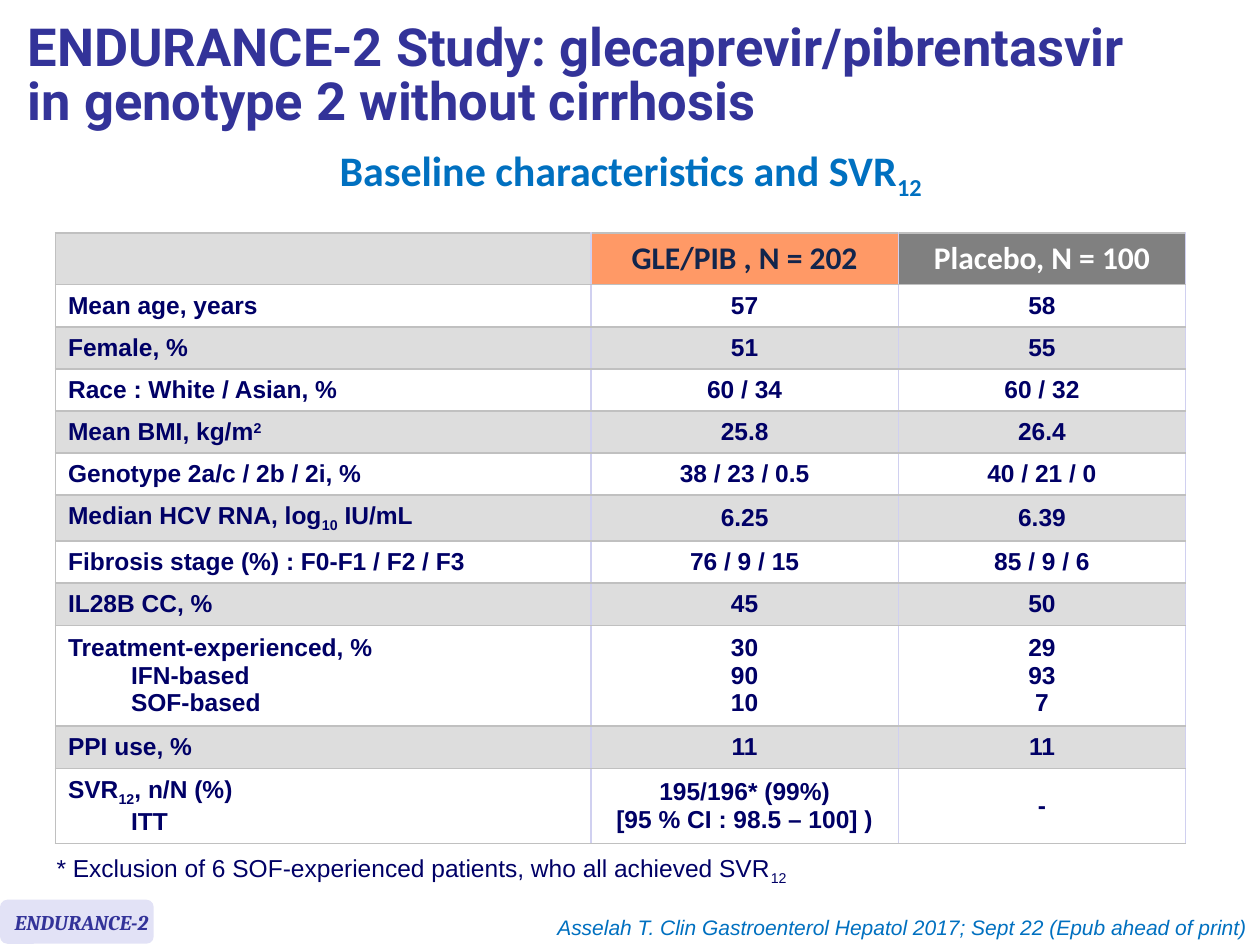
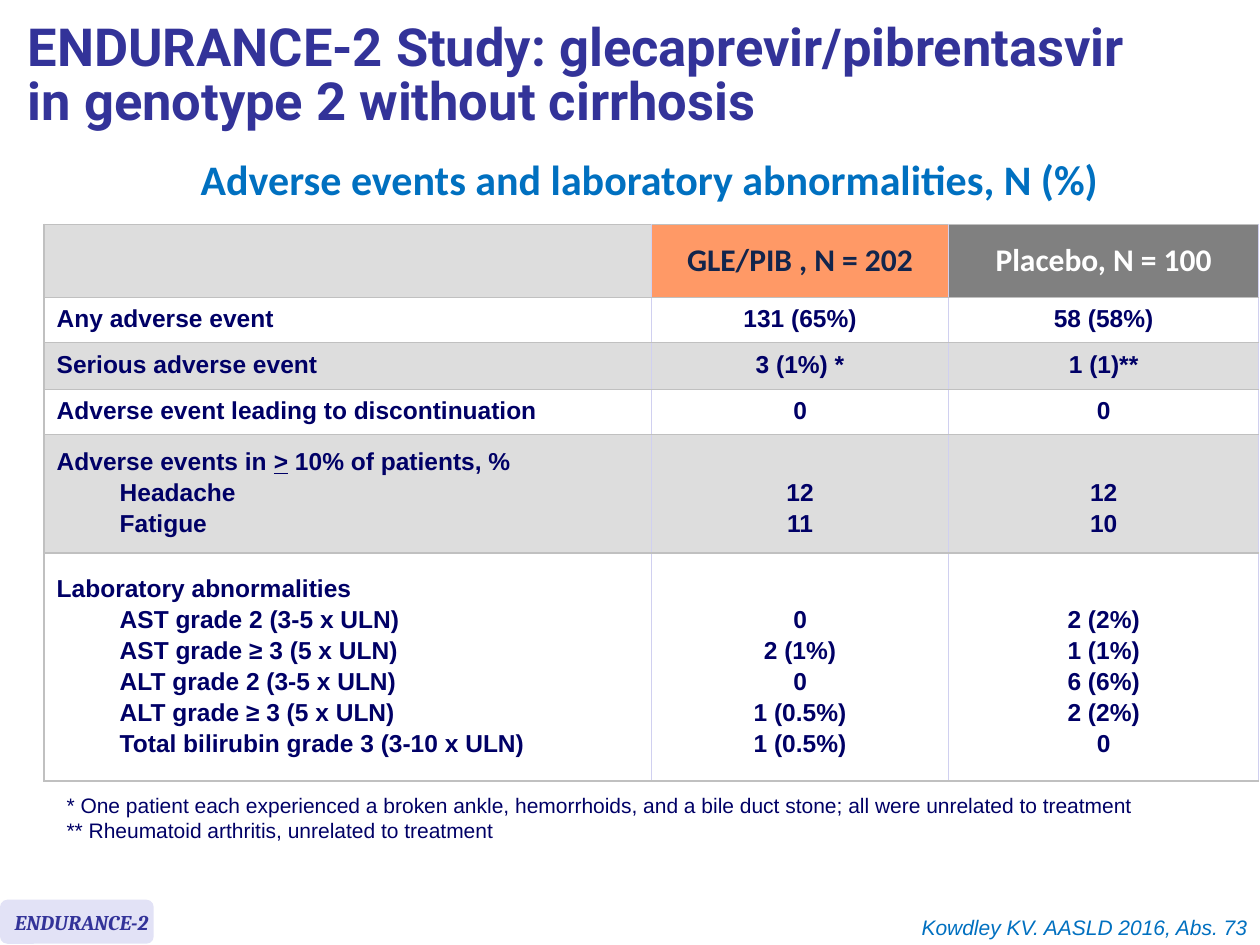
from dataclasses import dataclass

from lxml.etree import SubElement
from pptx import Presentation
from pptx.dml.color import RGBColor
from pptx.enum.shapes import MSO_SHAPE
from pptx.enum.text import MSO_ANCHOR, MSO_AUTO_SIZE, PP_ALIGN
from pptx.oxml.ns import qn
from pptx.util import Inches, Pt


@dataclass(frozen=True)
class TextStyle:
    font: str
    size: float
    color: str
    bold: bool = False
    italic: bool = False


class Theme:
    title = TextStyle("Roboto", 30, "333399", bold=True)
    subtitle = TextStyle("Calibri", 24, "0070C0", bold=True)
    treated_head = TextStyle("Calibri", 18, "12254C", bold=True)
    placebo_head = TextStyle("Calibri", 18, "FFFFFF", bold=True)
    cell = TextStyle("Arial", 14, "000066", bold=True)
    large_note = TextStyle("Arial", 14, "000066")
    small_note = TextStyle("Arial", 12, "000066")
    badge = TextStyle("Cambria", 12, "333399", bold=True, italic=True)
    source = TextStyle("Arial", 12, "0070C0", italic=True)
    treated_fill, placebo_fill, badge_fill = "FF9966", "808080", "E2E2F6"
    band_fills = ("DDDDDD", "FFFFFF")
    rule, column_rule = "C0C0C0", "D0D0F0"


SUB = {"baseline": "-25000"}
SUPER = {"baseline": "30000"}
UNDERLINE = {"u": "sng"}

TITLE = "ENDURANCE-2 Study: glecaprevir/pibrentasvir\vin genotype 2 without cirrhosis"
BADGE = "ENDURANCE-2"
ARMS = ("GLE/PIB , N = 202", "Placebo, N = 100")

# A cell is a list of lines; a line is a string or a tuple of (text, run attributes).
# Lines after the first one of a row label are indented.
SLIDES = [
    {
        "subtitle": (("Baseline characteristics and SVR", {}), ("12", SUB)),
        "subtitle_at": (0.28, 1.34, 9.45, 0.35),
        "table_at": (0.44, 1.85),
        "columns": (4.25, 2.44, 2.28),
        "header_height": 0.41,
        "line_pitch": {},
        "rows": [
            (0.32, ["Mean age, years"], ["57"], ["58"]),
            (0.32, ["Female, %"], ["51"], ["55"]),
            (0.32, ["Race : White / Asian, %"], ["60 / 34"], ["60 / 32"]),
            (0.32, [(("Mean BMI, kg/m", {}), ("2", SUPER))], ["25.8"], ["26.4"]),
            (0.32, ["Genotype 2a/c / 2b / 2i, %"], ["38 / 23 / 0.5"], ["40 / 21 / 0"]),
            (0.35, [(("Median HCV RNA, log", {}), ("10", SUB), (" IU/mL", {}))],
             ["6.25"], ["6.39"]),
            (0.32, ["Fibrosis stage (%) : F0-F1 / F2 / F3"], ["76 / 9 / 15"], ["85 / 9 / 6"]),
            (0.32, ["IL28B CC, %"], ["45"], ["50"]),
            (0.77, ["Treatment-experienced, %", "IFN-based", "SOF-based"],
             ["30", "90", "10"], ["29", "93", "7"]),
            (0.32, ["PPI use, %"], ["11"], ["11"]),
            (0.58, [(("SVR", {}), ("12", SUB), (", n/N (%)", {})), "ITT"],
             ["195/196* (99%)", "[95 % CI : 98.5 – 100] )"], ["-"]),
        ],
        "notes": [(("* Exclusion of 6 SOF-experienced patients, who all achieved SVR", {}),
                   ("12", SUB))],
        "notes_at": (0.35, 6.72, 9.25, 0.34),
        "notes_style": Theme.large_note,
        "source": "Asselah T. Clin Gastroenterol Hepatol 2017; Sept 22 (Epub ahead of print)",
    },
    {
        "subtitle": "Adverse events and laboratory abnormalities, N (%)",
        "subtitle_at": (0.43, 1.36, 9.45, 0.35),
        "table_at": (0.35, 1.78),
        "columns": (4.82, 2.36, 2.46),
        "header_height": 0.58,
        "line_pitch": {"line_spacing": Pt(15), "space_before": Pt(2.8)},
        "rows": [
            (0.36, ["Any adverse event"], ["131 (65%)"], ["58 (58%)"]),
            (0.37, ["Serious adverse event"], ["3 (1%) *"], ["1 (1)**"]),
            (0.36, ["Adverse event leading to discontinuation"], ["0"], ["0"]),
            (0.94, [(("Adverse events in ", {}), (">", UNDERLINE), (" 10% of patients, %", {})),
                    "Headache", "Fatigue"], ["12", "11"], ["12", "10"]),
            (1.81, ["Laboratory abnormalities", "AST grade 2 (3-5 x ULN)",
                    "AST grade ≥ 3 (5 x ULN)", "ALT grade 2 (3-5 x ULN)",
                    "ALT grade ≥ 3 (5 x ULN)", "Total bilirubin grade 3 (3-10 x ULN)"],
             ["0", "2 (1%)", "0", "1 (0.5%)", "1 (0.5%)"],
             ["2 (2%)", "1 (1%)", "6 (6%)", "2 (2%)", "0"]),
        ],
        "notes": ["* One patient each experienced a broken ankle, hemorrhoids, and a bile duct "
                  "stone; all were unrelated to treatment",
                  "** Rheumatoid arthritis, unrelated to treatment"],
        "notes_at": (0.43, 6.24, 9.25, 0.5),
        "notes_style": Theme.small_note,
        "source": "Kowdley KV. AASLD 2016, Abs. 73",
    },
]

TITLE_AT = (0.12, 0.08, 9.88, 1.07)
BADGE_AT = (0, 7.14, 1.22, 0.35)
SOURCE_AT = (2.64, 7.21, 7.36, 0.3)
CELL_MARGIN = 0.05
SUBLINE_INDENT = 0.5
LINE_STEP = 17.8 / 72


def rgb(color):
    return RGBColor.from_string(color)


def inches(lengths):
    return [Inches(length) for length in lengths]


def style_font(font, style):
    font.name, font.size = style.font, Pt(style.size)
    font.bold, font.italic = style.bold, style.italic
    font.color.rgb = rgb(style.color)


def write_lines(frame, lines, style, **paragraph_format):
    for index, line in enumerate(lines):
        paragraph = frame.paragraphs[0] if index == 0 else frame.add_paragraph()
        for name, value in paragraph_format.items():
            if index or name != "space_before":
                setattr(paragraph, name, value)
        for text, attributes in [(line, {})] if isinstance(line, str) else line:
            run = paragraph.add_run()
            run.text = text
            style_font(run.font, style)
            for name, value in attributes.items():
                run._r.get_or_add_rPr().set(name, value)


def add_text(slide, at, lines, style, **paragraph_format):
    frame = slide.shapes.add_textbox(*inches(at)).text_frame
    frame.word_wrap = True
    write_lines(frame, lines, style, **paragraph_format)


def add_title(slide):
    title = slide.shapes.title
    title.left, title.top, title.width, title.height = inches(TITLE_AT)
    frame = title.text_frame
    frame.auto_size, frame.vertical_anchor = MSO_AUTO_SIZE.NONE, MSO_ANCHOR.MIDDLE
    frame.text = TITLE
    paragraph = frame.paragraphs[0]
    paragraph.alignment, paragraph.line_spacing = PP_ALIGN.LEFT, 0.85
    for run in paragraph.runs:
        style_font(run.font, Theme.title)


def add_badge(slide):
    badge = slide.shapes.add_shape(MSO_SHAPE.ROUNDED_RECTANGLE, *inches(BADGE_AT))
    badge.shadow.inherit = False
    badge.fill.solid()
    badge.fill.fore_color.rgb = rgb(Theme.badge_fill)
    badge.line.fill.background()
    frame = badge.text_frame
    frame.vertical_anchor = MSO_ANCHOR.TOP
    frame.margin_top, frame.margin_right = Inches(0.06), 0
    write_lines(frame, [BADGE], Theme.badge, alignment=PP_ALIGN.LEFT)


def format_cell(cell, fill, left_rule):
    """Draw the borders first: the schema wants them ahead of the fill."""
    properties = cell._tc.get_or_add_tcPr()
    borders = {"a:lnL": left_rule, "a:lnR": Theme.column_rule,
               "a:lnT": Theme.rule, "a:lnB": Theme.rule}
    for side, color in borders.items():
        border = SubElement(properties, qn(side), w=str(Pt(1)))
        SubElement(SubElement(border, qn("a:solidFill")), qn("a:srgbClr"), val=color)
    cell.fill.solid()
    cell.fill.fore_color.rgb = rgb(fill)
    cell.vertical_anchor = MSO_ANCHOR.MIDDLE
    cell.margin_top = cell.margin_bottom = Inches(CELL_MARGIN)


def add_results(slide, content):
    columns, rows = content["columns"], content["rows"]
    heights = [content["header_height"], *(row[0] for row in rows)]
    size = (sum(columns), sum(heights))
    table = slide.shapes.add_table(len(heights), len(columns),
                                   *inches(content["table_at"] + size)).table
    table.first_row = table.horz_banding = False
    for column, width in zip(table.columns, columns):
        column.width = Inches(width)
    for row, height in zip(table.rows, heights):
        row.height = Inches(height)

    heads = [(Theme.band_fills[0], None, None),
             (Theme.treated_fill, ARMS[0], Theme.treated_head),
             (Theme.placebo_fill, ARMS[1], Theme.placebo_head)]
    for col, (fill, arm, style) in enumerate(heads):
        cell = table.cell(0, col)
        format_cell(cell, fill, Theme.column_rule if col else Theme.rule)
        if arm:
            write_lines(cell.text_frame, [arm], style, alignment=PP_ALIGN.CENTER)

    for row, (_, label, *values) in enumerate(rows, start=1):
        for col, lines in enumerate([label, *values]):
            cell = table.cell(row, col)
            format_cell(cell, Theme.band_fills[row % 2],
                        Theme.column_rule if col else Theme.rule)
            alignment = PP_ALIGN.CENTER if col else PP_ALIGN.LEFT
            write_lines(cell.text_frame, lines, Theme.cell,
                        alignment=alignment, **content["line_pitch"])
            if content["line_pitch"]:
                skipped = len(label) - len(lines)
                cell.margin_top = Inches(CELL_MARGIN + skipped * LINE_STEP)
        for subline in table.cell(row, 0).text_frame.paragraphs[1:]:
            subline._p.get_or_add_pPr().set("marL", str(Inches(SUBLINE_INDENT)))


def main():
    prs = Presentation()
    prs.slide_width, prs.slide_height = Inches(10), Inches(7.5)
    for content in SLIDES:
        slide = prs.slides.add_slide(prs.slide_layouts.get_by_name("Title Only"))
        add_title(slide)
        add_text(slide, content["subtitle_at"], [content["subtitle"]], Theme.subtitle,
                 alignment=PP_ALIGN.CENTER, line_spacing=Pt(15.2))
        add_results(slide, content)
        add_text(slide, content["notes_at"], content["notes"], content["notes_style"])
        add_badge(slide)
        add_text(slide, SOURCE_AT, [content["source"]], Theme.source,
                 alignment=PP_ALIGN.RIGHT)
    prs.save("out.pptx")


if __name__ == "__main__":
    main()
